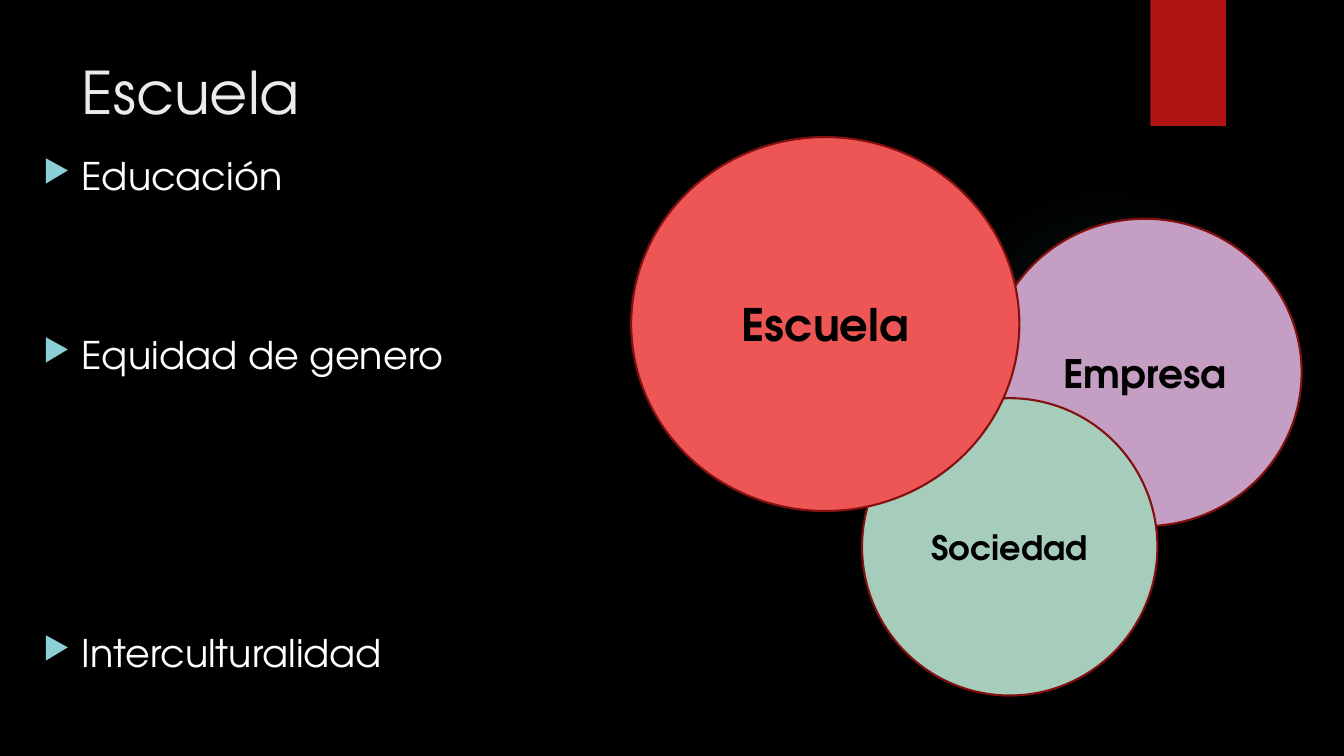
import pptx
import pptx.util
import pptx.oxml
import pptx.dml.color
import pptx.enum.shapes
import pptx.enum.text

Inches = pptx.util.Inches
Pt = pptx.util.Pt
RGBColor = pptx.dml.color.RGBColor
Shape = pptx.enum.shapes.MSO_SHAPE
Align = pptx.enum.text.PP_ALIGN
Anchor = pptx.enum.text.MSO_ANCHOR

FONT = "TeX Gyre Adventor"
BLACK = RGBColor(0x00, 0x00, 0x00)
WHITE = RGBColor(0xFF, 0xFF, 0xFF)
PALE = RGBColor(0xEB, 0xEB, 0xEB)
RED = RGBColor(0xB0, 0x15, 0x13)
DARK = RGBColor(0x82, 0x10, 0x0E)
CORAL = RGBColor(0xED, 0x56, 0x54)
LILAC = RGBColor(0xC5, 0x9E, 0xC3)
MINT = RGBColor(0xA6, 0xCD, 0xBC)
AQUA = RGBColor(0x8A, 0xD0, 0xD6)
TEAL = RGBColor(0x50, 0xB9, 0xC1)
NS = 'xmlns:a="http://schemas.openxmlformats.org/drawingml/2006/main"'


def add_text(para, text, size, color, bold=False):
    run = para.add_run()
    run.text = text
    run.font.name = FONT
    run.font.size = Pt(size)
    run.font.bold = bold
    run.font.color.rgb = color


def add_shape(kind, box, fill=None, line=None):
    shape = slide.shapes.add_shape(kind, *[Inches(v) for v in box])
    shape.shadow.inherit = False
    if fill is not None:
        shape.fill.solid()
        shape.fill.fore_color.rgb = fill
    if line is None:
        shape.line.fill.background()
    else:
        shape.line.color.rgb = line
        shape.line.width = Pt(1.5)
    return shape


deck = pptx.Presentation()
deck.slide_width = Inches(13.33)
deck.slide_height = Inches(7.5)
slide = deck.slides.add_slide(deck.slide_layouts[5])
slide.background.fill.solid()
slide.background.fill.fore_color.rgb = BLACK

# Faint round glow behind the circles
glow = add_shape(Shape.OVAL, (9.41, 1.83, 3.08, 3.08))
stops = "".join(
    f'<a:gs pos="{pos * 1000}"><a:srgbClr val="{TEAL}">'
    f'<a:alpha val="{alpha * 1000}"/></a:srgbClr></a:gs>'
    for pos, alpha in [(0, 7), (36, 6), (69, 0)])
grad = pptx.oxml.parse_xml(
    f'<a:gradFill {NS}><a:gsLst>{stops}</a:gsLst><a:path path="circle">'
    '<a:fillToRect l="50000" t="50000" r="50000" b="50000"/>'
    '</a:path></a:gradFill>')
glow.element.spPr.find(pptx.oxml.ns.qn("a:prstGeom")).addnext(grad)

# Red tab at the top edge
add_shape(Shape.RECTANGLE, (11.41, 0, 0.75, 1.25), RED)

# Title
title = slide.shapes.title
title.left, title.top = Inches(0.71), Inches(0.5)
title.width, title.height = Inches(10.29), Inches(1.53)
frame = title.text_frame
frame.word_wrap = True
frame.vertical_anchor = Anchor.TOP
para = frame.paragraphs[0]
para.alignment = Align.LEFT
add_text(para, "Escuela", 42, PALE)

# Bulleted topics, spaced in points
topics = [("Educación", 0), ("Equidad de genero", 95.3),
          ("Interculturalidad", 180.6)]
body = slide.shapes.add_textbox(
    Inches(0.33), Inches(1.46), Inches(9.78), Inches(4.59))
frame = body.text_frame
frame.word_wrap = True
for i, (text, gap) in enumerate(topics):
    para = frame.add_paragraph() if i else frame.paragraphs[0]
    props = para._p.get_or_add_pPr()
    props.set("marL", str(Inches(0.38)))
    props.set("indent", str(Inches(-0.38)))
    for mark in (f'<a:buClr {NS}><a:srgbClr val="{AQUA}"/></a:buClr>',
                 f'<a:buSzPct {NS} val="80000"/>',
                 f'<a:buChar {NS} char="▶"/>'):
        props.append(pptx.oxml.parse_xml(mark))
    para.space_before = Pt(gap)
    add_text(para, text, 27.2, WHITE)

# Overlapping circles, back to front
circles = [
    ("Empresa", (9.8, 2.17, 3.11, 3.05), LILAC, 28),
    ("Sociedad", (8.55, 3.95, 2.93, 2.95), MINT, 24),
    ("Escuela", (6.26, 1.36, 3.85, 3.71), CORAL, 32),
]
for text, box, fill, size in circles:
    disc = add_shape(Shape.OVAL, box, fill, DARK)
    frame = disc.text_frame
    frame.word_wrap = True
    frame.vertical_anchor = Anchor.MIDDLE
    para = frame.paragraphs[0]
    para.alignment = Align.CENTER
    add_text(para, text, size, BLACK, True)

deck.save("out.pptx")
